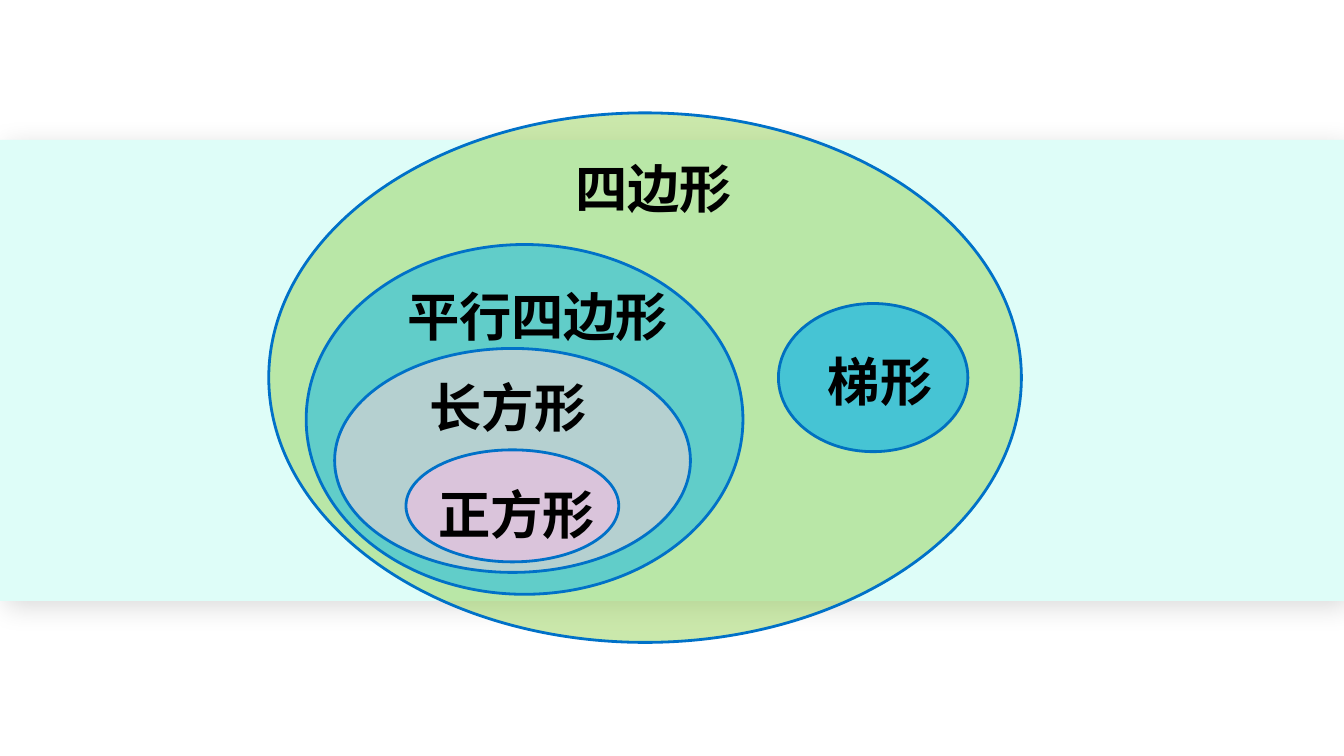
import pptx
import pptx.util
import pptx.dml.color
import pptx.enum.shapes
import pptx.oxml.ns
import lxml.etree

Pt = pptx.util.Pt
HUES = {
    "band": "DEFDF8", "green": "92D050", "blue": "00B0F0", "pink": "FAD4D7",
    "mauve": "DAC4DB", "line": "0071C8", "edge": "0070C0", "ink": "000000",
}


class Board:
    font = "Noto Sans CJK SC"
    size = 28
    weight = 1.5

    def __init__(self, slide):
        self.slide = slide

    def color(self, hue):
        return pptx.dml.color.RGBColor.from_string(HUES[hue])

    def node(self, parent, tag, **attrs):
        return lxml.etree.SubElement(parent, pptx.oxml.ns.qn(tag), attrs)

    def shape(self, kind, box, hue, alpha=100):
        item = self.slide.shapes.add_shape(kind, *map(Pt, box))
        item.shadow.inherit = False
        item.fill.solid()
        item.fill.fore_color.rgb = self.color(hue)
        if alpha < 100:
            fill = item.fill._xPr.find(pptx.oxml.ns.qn("a:solidFill"))
            self.node(fill[0], "a:alpha", val=str(alpha * 1000))
        return item

    def band(self, box):
        item = self.shape(pptx.enum.shapes.MSO_SHAPE.RECTANGLE, box, "band")
        item.line.fill.background()
        effects = item._element.spPr.find(pptx.oxml.ns.qn("a:effectLst"))
        shade = self.node(effects, "a:outerShdw", blurRad=str(Pt(15)),
                          dist=str(Pt(5)), dir=str(45 * 60000), algn="tl",
                          rotWithShape="0")
        tint = self.node(shade, "a:srgbClr", val=HUES["ink"])
        self.node(tint, "a:alpha", val="15000")

    def oval(self, box, hue, alpha, edge):
        item = self.shape(pptx.enum.shapes.MSO_SHAPE.OVAL, box, hue, alpha)
        item.line.color.rgb = self.color(edge)
        item.line.width = Pt(self.weight)

    def label(self, words, left, top, width):
        box = self.slide.shapes.add_textbox(Pt(left), Pt(top), Pt(width), Pt(41))
        frame = box.text_frame
        frame.word_wrap = True
        run = frame.paragraphs[0].add_run()
        run.text = words
        run.font.size = Pt(self.size)
        run.font.bold = True
        run.font.color.rgb = self.color("ink")
        run.font.name = self.font
        self.node(run.font._element, "a:ea", typeface=self.font)


def main():
    deck = pptx.Presentation()
    deck.slide_width, deck.slide_height = Pt(720), Pt(405)
    board = Board(deck.slides.add_slide(deck.slide_layouts[6]))

    board.band((0, 75, 720, 247))

    ovals = [
        ((144, 60.5, 403.2, 283.7), "green", 48, "line"),
        ((164, 131, 234, 187.4), "blue", 47, "line"),
        ((179.3, 186.7, 190.6, 120), "pink", 55, "line"),
        ((217.5, 241, 114, 60), "mauve", 100, "line"),
        ((417, 162.6, 101.5, 79.4), "blue", 62, "edge"),
    ]
    for oval in ovals:
        board.oval(*oval)

    labels = [
        ("四边形", 301, 80, 103),
        ("平行四边形", 211, 148.5, 171.5),
        ("长方形", 223.2, 197.3, 103),
        ("正方形", 227.6, 255, 103),
        ("梯形", 436.5, 183.7, 78),
    ]
    for label in labels:
        board.label(*label)

    deck.save("out.pptx")


if __name__ == "__main__":
    main()
